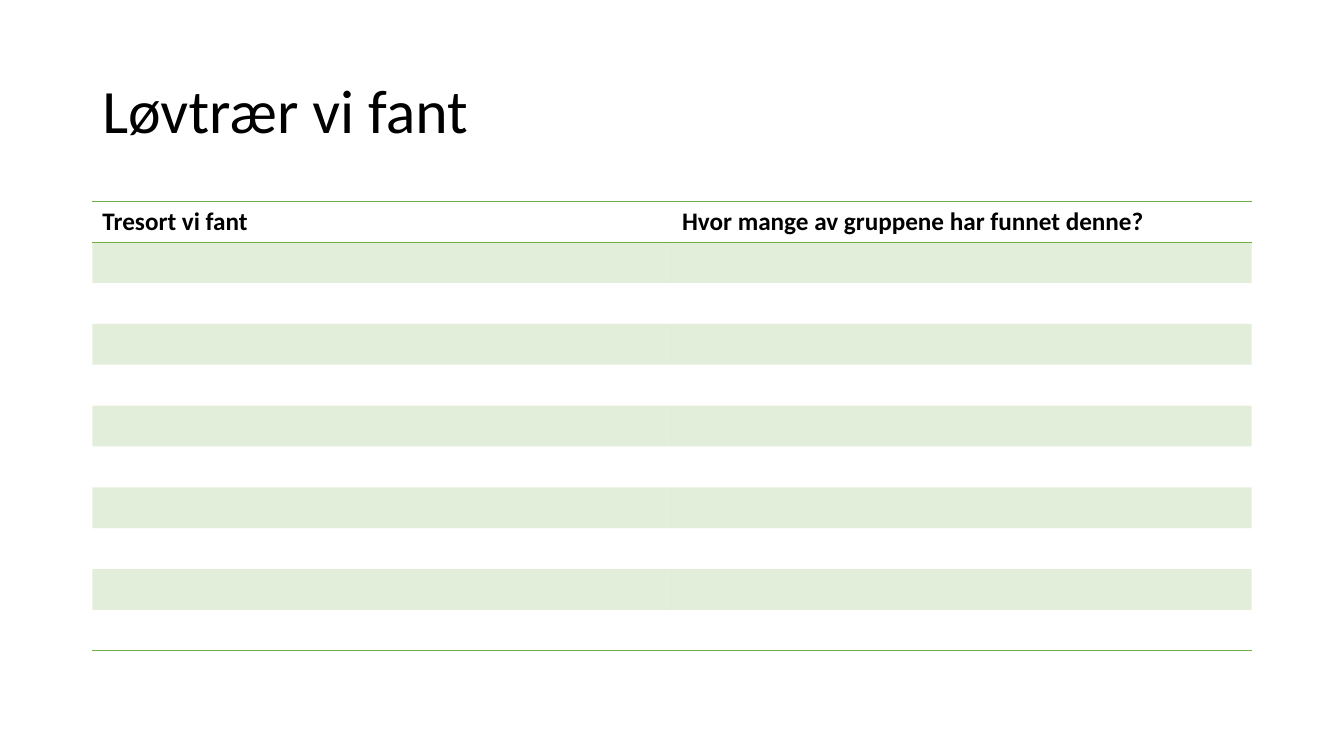
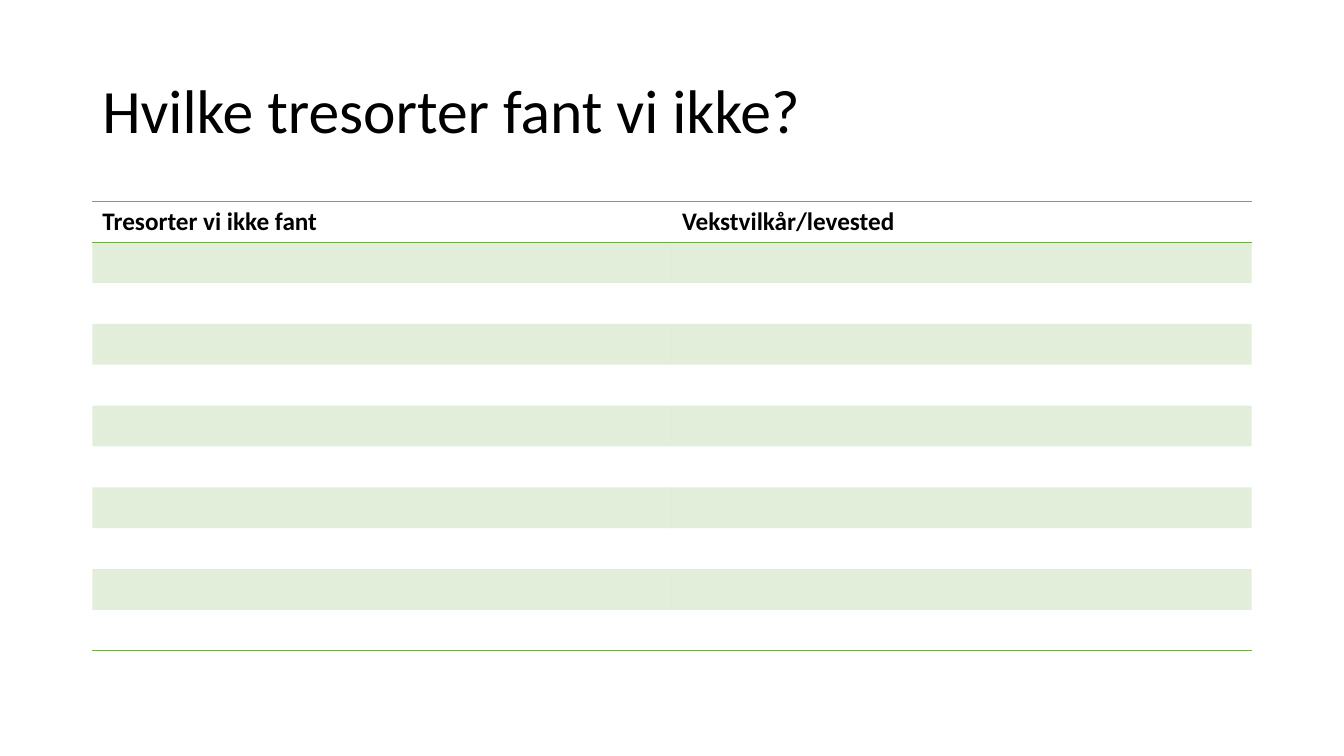
"""Build two slides with empty tables for recording tree species."""
from pptx import Presentation
from pptx.dml.color import RGBColor
from pptx.enum.text import MSO_ANCHOR
from pptx.oxml.ns import qn
from pptx.util import Pt
from lxml import etree

MIDDLE = MSO_ANCHOR.MIDDLE
BLACK = RGBColor(0x00, 0x00, 0x00)
GREEN = RGBColor(0x70, 0xAD, 0x47)
FONT = "Calibri"
LEFT, WIDTH = Pt(66), Pt(828)
ROW_COUNT = 11
ROW_HEIGHT = Pt(29.2)
BAND_ALPHA = "20000"
RULED_EDGES = {0, 1, ROW_COUNT}
SLIDES = [
    ("Løvtrær vi fant",
     ["Tresort vi fant", "Hvor mange av gruppene har funnet denne?"]),
    ("Hvilke tresorter fant vi ikke?",
     ["Tresorter vi ikke fant", "Vekstvilkår/levested"]),
]


def style_text(paragraph, size, bold=False):
    for run in paragraph.runs:
        run.font.name = FONT
        run.font.size = Pt(size)
        run.font.bold = bold
        run.font.color.rgb = BLACK


def add_title(slide, wording):
    frame = slide.shapes.add_textbox(LEFT, Pt(28.75), WIDTH, Pt(104.4)).text_frame
    frame.word_wrap = True
    frame.vertical_anchor = MIDDLE
    frame.text = wording
    frame.paragraphs[0].line_spacing = 0.9
    style_text(frame.paragraphs[0], 44)


def fill_cell(cell, banded):
    if not banded:
        cell.fill.background()
        return
    cell.fill.solid()
    cell.fill.fore_color.rgb = GREEN
    tint = cell._tc.tcPr.find(".//" + qn("a:srgbClr"))
    etree.SubElement(tint, qn("a:alpha"), val=BAND_ALPHA)


def rule_cell(cell, row):
    ruled = {"T": row in RULED_EDGES, "B": row + 1 in RULED_EDGES}
    for position, side in enumerate("LRTB"):
        border = etree.Element(qn("a:ln" + side), w=str(Pt(1)))
        if ruled.get(side):
            stroke = etree.SubElement(border, qn("a:solidFill"))
            etree.SubElement(stroke, qn("a:srgbClr"), val=str(GREEN))
        else:
            etree.SubElement(border, qn("a:noFill"))
        cell._tc.tcPr.insert(position, border)


def add_tree_table(slide, headings):
    table = slide.shapes.add_table(ROW_COUNT, len(headings), LEFT, Pt(143.75),
                                   WIDTH, ROW_HEIGHT * ROW_COUNT).table
    table.first_row = False
    table.horz_banding = False
    for row, table_row in enumerate(table.rows):
        table_row.height = ROW_HEIGHT
        for cell in table_row.cells:
            fill_cell(cell, row % 2 == 1)
            rule_cell(cell, row)
    for column, heading in enumerate(headings):
        cell = table.cell(0, column)
        cell.text_frame.text = heading
        style_text(cell.text_frame.paragraphs[0], 18, bold=True)


def main():
    deck = Presentation()
    deck.slide_width, deck.slide_height = Pt(960), Pt(540)
    for title, headings in SLIDES:
        slide = deck.slides.add_slide(deck.slide_layouts[6])
        add_title(slide, title)
        add_tree_table(slide, headings)
    deck.save("out.pptx")


if __name__ == "__main__":
    main()
